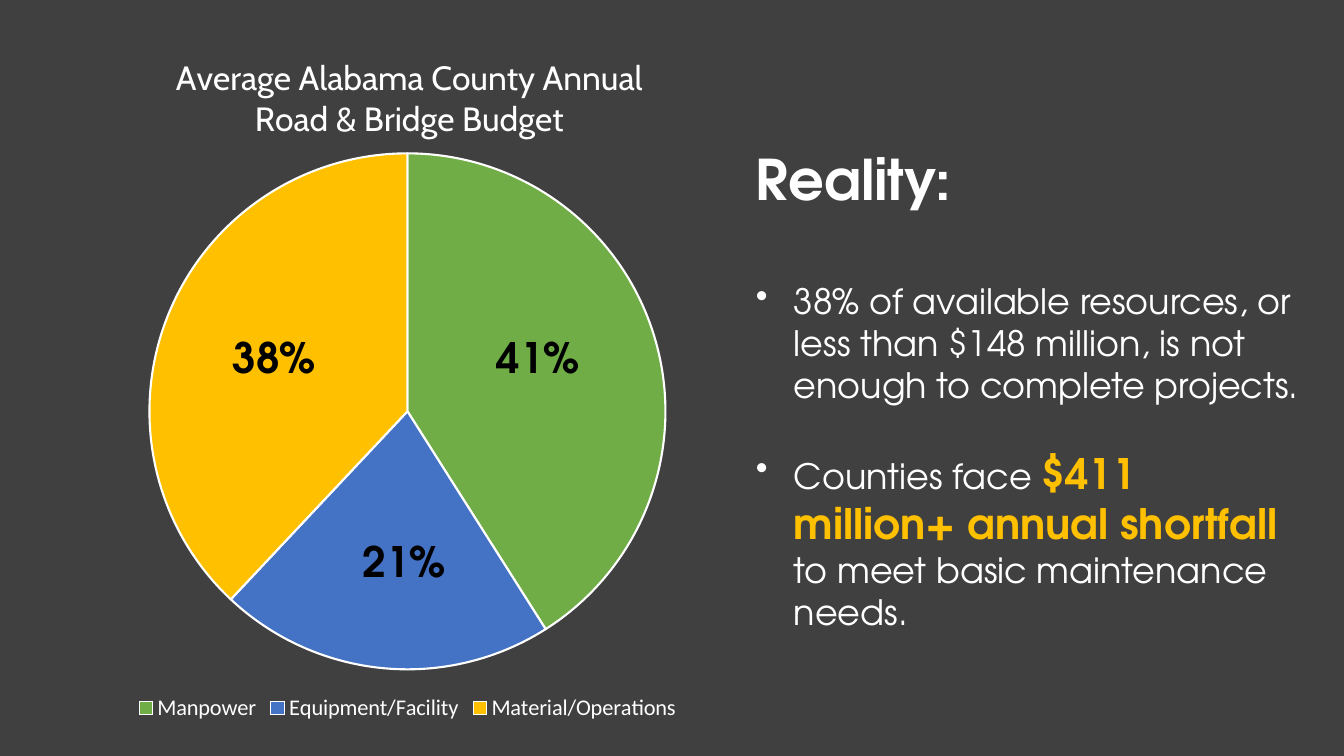
from lxml import etree
from pptx import Presentation
from pptx import util as u
from pptx.chart import data as chart_data
from pptx.dml.color import RGBColor
from pptx.enum import chart as charts, shapes, text
from pptx.oxml import ns

SCALE = 914400 / 100.8
COLORS = {
    "background": "404040",
    "white": "FFFFFF",
    "black": "000000",
    "green": "70AD47",
    "blue": "4472C4",
    "gold": "FFC000",
}
HEADING = {"name": "TeX Gyre Adventor", "size": 40, "bold": True, "color": "white"}
BODY = {**HEADING, "size": 25, "bold": False}
ACCENT = {**HEADING, "size": 30, "color": "gold"}
PERCENT = {**HEADING, "size": 30, "color": "black"}
CHART_TITLE = {"name": "Cabin", "size": 24, "bold": False, "color": "white"}
LEGEND = {"name": "Calibri", "size": 16, "bold": False, "color": "white"}


def px(value):
    return u.Emu(round(value * SCALE))


def color(name):
    return RGBColor.from_string(COLORS[name])


class BudgetSlide:
    def __init__(self, presentation):
        self.slide = presentation.slides.add_slide(presentation.slide_layouts[6])

    def format(self, font, style):
        values = {**style, "size": u.Pt(style["size"])}
        font.color.rgb = color(values.pop("color"))
        for name, value in values.items():
            setattr(font, name, value)

    def rectangle(self, box, fill):
        shape = self.slide.shapes.add_shape(
            shapes.MSO_SHAPE.RECTANGLE, *map(px, box))
        shape.shadow.inherit = False
        shape.fill.solid()
        shape.fill.fore_color.rgb = color(fill)
        shape.line.fill.background()

    def bullet(self, paragraph):
        properties = paragraph._p.get_or_add_pPr()
        properties.set("marL", str(px(38)))
        properties.set("indent", str(-px(38)))
        etree.SubElement(properties, ns.qn("a:buChar")).set("char", "•")

    def text(self, box, paragraphs):
        frame = self.slide.shapes.add_textbox(*map(px, box)).text_frame
        frame.word_wrap = True
        frame.auto_size = text.MSO_AUTO_SIZE.SHAPE_TO_FIT_TEXT
        for index, (runs, before, bulleted) in enumerate(paragraphs):
            paragraph = frame.add_paragraph() if index else frame.paragraphs[0]
            if bulleted:
                self.bullet(paragraph)
            if index:
                paragraph.space_before = u.Pt(before)
            for words, style in runs:
                run = paragraph.add_run()
                run.text = words
                self.format(run.font, style)

    def layout(self, parent, position, values):
        for old in parent.findall(ns.qn("c:layout")):
            parent.remove(old)
        layout = etree.Element(ns.qn("c:layout"))
        manual = etree.SubElement(layout, ns.qn("c:manualLayout"))
        for name, value in values.items():
            etree.SubElement(manual, ns.qn(f"c:{name}")).set("val", str(value))
        parent.insert(position, layout)

    def pie(self, box, title, slices):
        data = chart_data.CategoryChartData()
        data.categories = [name for name, _, _ in slices]
        data.add_series("Series 1", [value for _, value, _ in slices])
        chart = self.slide.shapes.add_chart(
            charts.XL_CHART_TYPE.PIE, *map(px, box), data).chart
        self.format(chart.font, {**LEGEND, "size": 10, "color": "black"})

        chart.has_title = True
        paragraph = chart.chart_title.text_frame.paragraphs[0]
        run = paragraph.add_run()
        run.text = title
        self.format(run.font, CHART_TITLE)
        self.layout(chart.chart_title._element, 1, {
            "xMode": "edge", "yMode": "edge", "x": 0.15, "y": 0.03})

        chart.has_legend = True
        chart.legend.position = charts.XL_LEGEND_POSITION.BOTTOM
        chart.legend.include_in_layout = False
        self.format(chart.legend.font, LEGEND)

        plot = chart.plots[0]
        plot.has_data_labels = False
        for index, (_, _, fill) in enumerate(slices):
            point = plot.series[0].points[index].format
            point.fill.solid()
            point.fill.fore_color.rgb = color(fill)
            point.line.color.rgb = color("white")
            point.line.width = u.Pt(1.5)
        self.layout(chart._chartSpace.chart.plotArea, 0, {
            "layoutTarget": "inner", "xMode": "edge", "yMode": "edge",
            "x": 0.12, "y": 0.18, "w": 0.76, "h": 0.74})


def main():
    presentation = Presentation()
    presentation.slide_width = px(1344)
    presentation.slide_height = px(756)
    budget = BudgetSlide(presentation)
    budget.rectangle((0, 0, 1344, 756), "background")
    budget.text((746, 140, 567, 502), [
        ([("Reality:", HEADING)], 0, False),
        ([("38% of available resources, or less than $148 million, "
           "is not enough to complete projects.", BODY)], 48, True),
        ([("Counties face ", BODY),
          ("$411 million+ annual shortfall ", ACCENT),
          ("to meet basic maintenance needs.", BODY)], 30, True),
    ])
    budget.pie((68, 27, 679, 699),
               "Average Alabama County Annual Road & Bridge Budget", [
        ("Manpower", 41, "green"),
        ("Equipment/Facility", 21, "blue"),
        ("Material/Operations", 38, "gold"),
    ])
    for words, left, top in (("38%", 223, 327), ("21%", 353, 531), ("41%", 487, 327)):
        budget.text((left, top, 139, 61), [([(words, PERCENT)], 0, False)])
    presentation.save("out.pptx")


if __name__ == "__main__":
    main()
